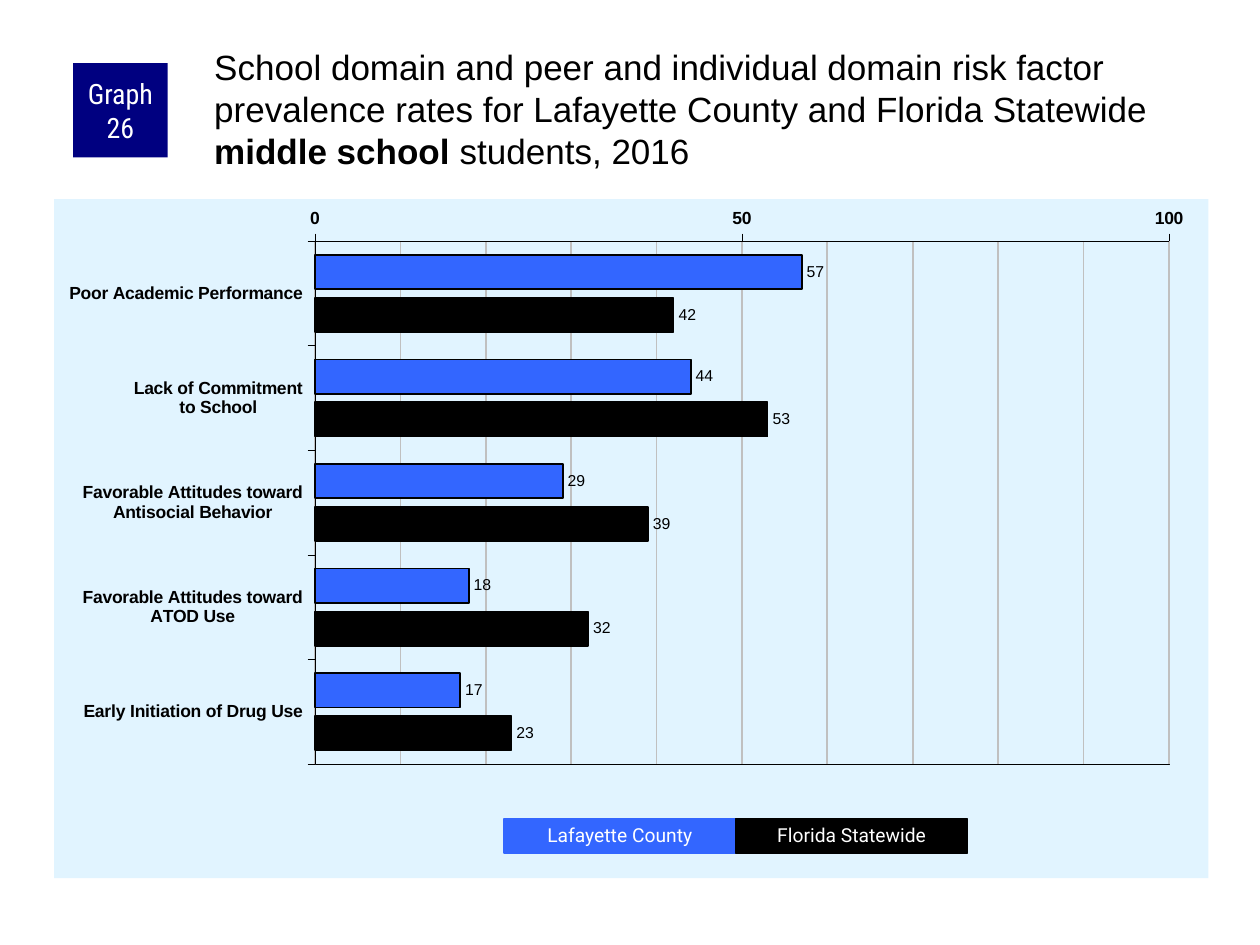
from copy import deepcopy
from dataclasses import dataclass

from lxml import etree
from pptx import Presentation
from pptx.chart.data import CategoryChartData
from pptx.dml.color import RGBColor
from pptx.enum.chart import XL_AXIS_CROSSES, XL_CHART_TYPE, XL_LABEL_POSITION, XL_TICK_MARK
from pptx.enum.shapes import MSO_SHAPE
from pptx.enum.text import MSO_ANCHOR, PP_ALIGN
from pptx.oxml import parse_xml
from pptx.util import Pt

BAR_CHART = XL_CHART_TYPE.BAR_CLUSTERED
AXIS_MAXIMUM = XL_AXIS_CROSSES.MAXIMUM
OUTSIDE_END = XL_LABEL_POSITION.OUTSIDE_END
TICK_OUTSIDE = XL_TICK_MARK.OUTSIDE
TICK_NONE = XL_TICK_MARK.NONE
RECTANGLE = MSO_SHAPE.RECTANGLE
MIDDLE = MSO_ANCHOR.MIDDLE
CENTER = PP_ALIGN.CENTER

COLORS = {
    "county": "3366FF",
    "state": "000000",
    "badge": "000080",
    "panel": "E1F4FF",
    "grid": "C0C0C0",
    "ink": "000000",
    "white": "FFFFFF",
}
NAMESPACES = (
    'xmlns:c="http://schemas.openxmlformats.org/drawingml/2006/chart" '
    'xmlns:a="http://schemas.openxmlformats.org/drawingml/2006/main"'
)
CATEGORIES = [
    "Poor Academic Performance",
    "Lack of Commitment\nto School",
    "Favorable Attitudes toward\nAntisocial Behavior",
    "Favorable Attitudes toward\nATOD Use",
    "Early Initiation of Drug Use",
]
PLOT_LAYOUT = {"x": 0.226, "y": 0.062, "w": 0.74, "h": 0.77}


@dataclass
class Group:
    name: str
    color: str
    rates: list[int]


@dataclass
class Label:
    text: str
    left: float
    top: float
    width: float
    height: float
    color: str
    font: str
    size: float
    side_inset: float
    end_inset: float
    line_spacing: float = 1.0
    outlined: bool = False


GROUPS = [
    Group("Lafayette County", "county", [57, 44, 29, 18, 17]),
    Group("Florida Statewide", "state", [42, 53, 39, 32, 23]),
]


def rgb(name: str) -> RGBColor:
    return RGBColor.from_string(COLORS[name])


def style_font(font, name: str, size: float, color: str, bold: bool = False) -> None:
    font.name = name
    font.size = Pt(size)
    font.bold = bold
    font.color.rgb = rgb(color)


def style_line(line, color: str, width: float) -> None:
    line.color.rgb = rgb(color)
    line.width = Pt(width)


def add_label(page, label: Label) -> None:
    box = page.shapes.add_shape(
        RECTANGLE, Pt(label.left), Pt(label.top), Pt(label.width), Pt(label.height)
    )
    box.shadow.inherit = False
    box.fill.solid()
    box.fill.fore_color.rgb = rgb(label.color)
    if label.outlined:
        style_line(box.line, label.color, 0.75)
    else:
        box.line.fill.background()
    frame = box.text_frame
    frame.word_wrap = True
    frame.vertical_anchor = MIDDLE
    frame.margin_left = frame.margin_right = Pt(label.side_inset)
    frame.margin_top = frame.margin_bottom = Pt(label.end_inset)
    para = frame.paragraphs[0]
    para.alignment = CENTER
    para.line_spacing = label.line_spacing
    span = para.add_run()
    span.text = label.text
    style_font(span.font, label.font, label.size, "white")


def add_title(page, spans: list[tuple[str, bool]]) -> None:
    box = page.shapes.add_textbox(Pt(120.24), Pt(23.76), Pt(570.24), Pt(59.76))
    frame = box.text_frame
    frame.word_wrap = True
    frame.margin_left = frame.margin_top = Pt(2.16)
    frame.margin_right = frame.margin_bottom = Pt(0)
    para = frame.paragraphs[0]
    for text, bold in spans:
        span = para.add_run()
        span.text = text
        style_font(span.font, "Arial", 20, "ink", bold)


def style_axes(chart) -> None:
    rates = chart.value_axis
    factors = chart.category_axis
    for axis in (rates, factors):
        axis.major_tick_mark = TICK_OUTSIDE
        axis.minor_tick_mark = TICK_NONE
        style_font(axis.tick_labels.font, "Arial", 10, "ink", True)
        style_line(axis.format.line, "ink", 0.25)
    factors.reverse_order = True
    factors.crosses = AXIS_MAXIMUM
    rates.minimum_scale = 0
    rates.maximum_scale = 100
    rates.major_unit = 50
    rates.minor_unit = 10
    rates.has_major_gridlines = True
    rates.has_minor_gridlines = True
    style_line(rates.major_gridlines.format.line, "grid", 1)
    plot_area = chart.element.chart.plotArea
    major = plot_area.find("{*}valAx/{*}majorGridlines")
    minor = plot_area.find("{*}valAx/{*}minorGridlines")
    minor.extend(deepcopy(part) for part in major)


def style_areas(chart) -> None:
    root = chart.element
    plot_area = root.chart.plotArea
    for layout in plot_area.findall("{*}layout"):
        plot_area.remove(layout)
    layout = parse_xml(f"<c:layout {NAMESPACES}><c:manualLayout/></c:layout>")
    chart_tag = layout.tag.removesuffix("layout")
    settings = {"layoutTarget": "inner", "xMode": "edge", "yMode": "edge", **PLOT_LAYOUT}
    for name, value in settings.items():
        etree.SubElement(layout[0], chart_tag + name).set("val", str(value))
    plot_area.insert(0, layout)
    plot_area.append(parse_xml(
        f'<c:spPr {NAMESPACES}><a:noFill/><a:ln w="{Pt(0.25)}"><a:solidFill>'
        f'<a:srgbClr val="{COLORS["ink"]}"/></a:solidFill></a:ln></c:spPr>'
    ))
    root.chart.addnext(parse_xml(
        f'<c:spPr {NAMESPACES}><a:solidFill><a:srgbClr val="{COLORS["panel"]}"/>'
        "</a:solidFill><a:ln><a:noFill/></a:ln></c:spPr>"
    ))


def add_rate_chart(page) -> None:
    data = CategoryChartData()
    data.categories = CATEGORIES
    for group in GROUPS:
        data.add_series(group.name, group.rates)
    chart = page.shapes.add_chart(
        BAR_CHART, Pt(30.96), Pt(113.76), Pt(659.52), Pt(388.08), data
    ).chart
    chart.has_legend = False
    chart.has_title = False
    style_font(chart.font, "Arial", 11.8, "ink")
    plot = chart.plots[0]
    plot.gap_width = 80
    plot.overlap = -25
    plot.vary_by_categories = False
    for series, group in zip(plot.series, GROUPS):
        series.format.fill.solid()
        series.format.fill.fore_color.rgb = rgb(group.color)
        series.invert_if_negative = False
        style_line(series.format.line, "ink", 1)
        labels = series.data_labels
        labels.show_value = True
        labels.position = OUTSIDE_END
        style_font(labels.font, "Arial", 9, "ink")
    style_axes(chart)
    style_areas(chart)


def main() -> None:
    deck = Presentation()
    deck.slide_width, deck.slide_height = Pt(720), Pt(540)
    page = deck.slides.add_slide(deck.slide_layouts[6])
    add_rate_chart(page)
    add_label(page, Label("Graph 26", 41.76, 36, 54, 54, "badge", "Roboto Condensed", 16, 3.6, 0))
    add_title(page, [
        ("School domain and peer and individual domain risk factor prevalence rates "
         "for Lafayette County and Florida Statewide ", False),
        ("middle school", True),
        (" students, 2016", False),
    ])
    key_width = 132.48
    for index, group in enumerate(GROUPS):
        add_label(page, Label(
            group.name, 288 + index * key_width, 468, key_width, 19.44,
            group.color, "Roboto", 11, 7.2, 3.6, 0.9, True,
        ))
    deck.save("out.pptx")


if __name__ == "__main__":
    main()
